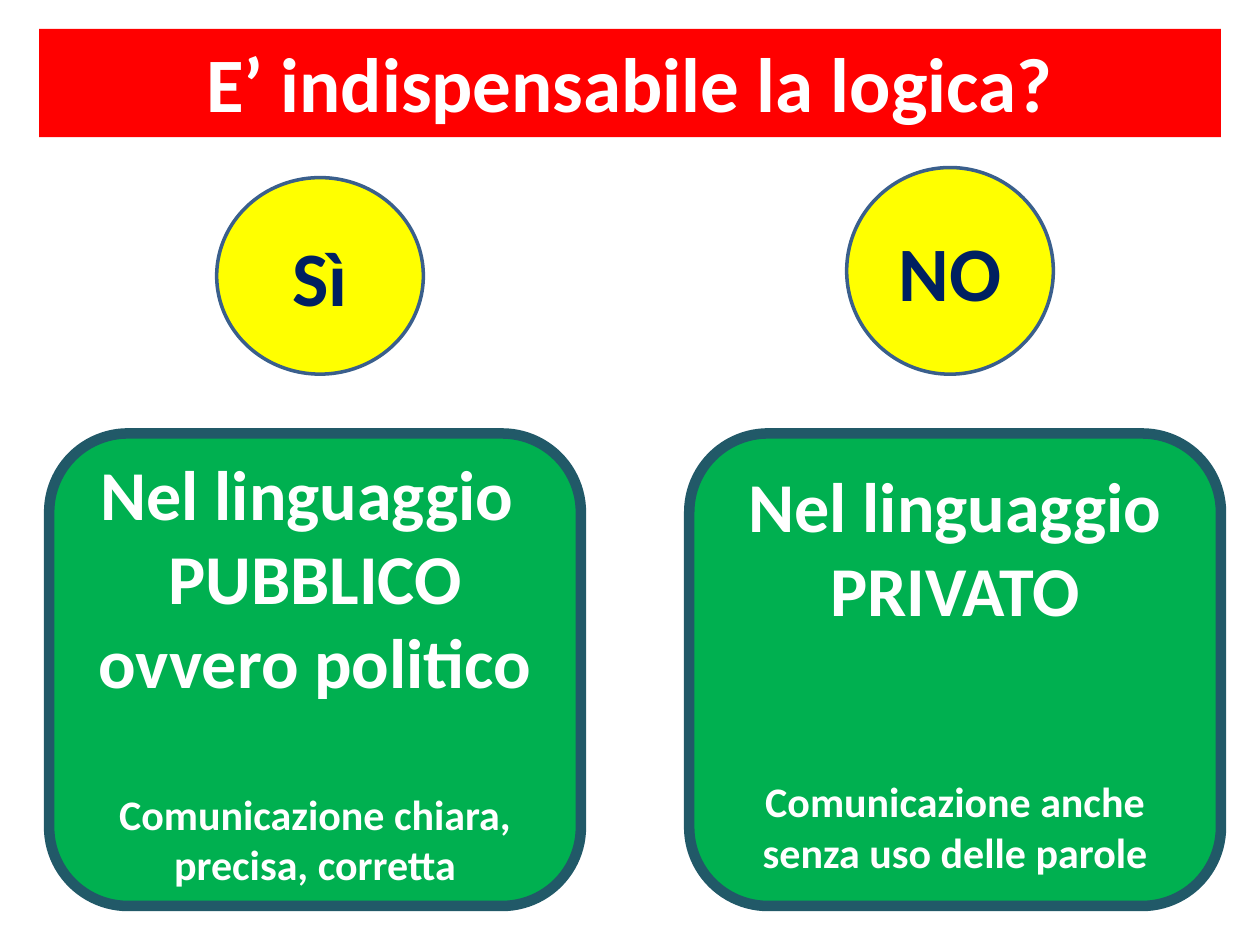
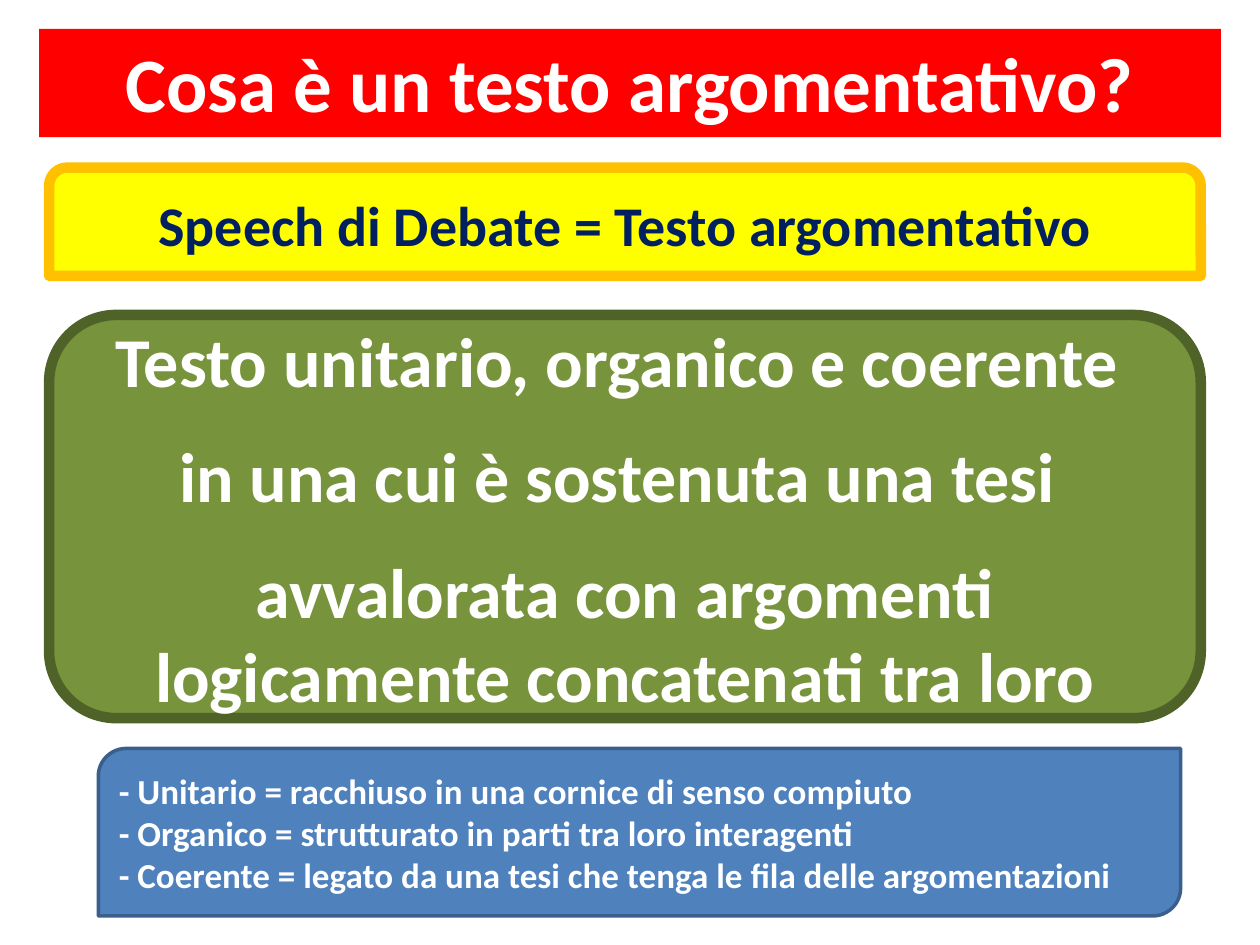
from dataclasses import dataclass

from pptx import Presentation
from pptx.dml.color import RGBColor
from pptx.enum.shapes import MSO_SHAPE as Shape
from pptx.enum.text import MSO_ANCHOR as Anchor, PP_ALIGN as Align
from pptx.util import Pt

PX = 9144  # EMU in one px, 100 px to the inch
SLIDE_W, SLIDE_H = 1000, 750


@dataclass(frozen=True)
class Theme:
    font: str = "Calibri"
    white: str = "FFFFFF"
    navy: str = "002060"
    red: str = "FF0000"
    yellow: str = "FFFF00"
    amber: str = "FFC000"
    green: str = "00B050"
    teal: str = "215968"
    olive: str = "77933C"
    dark_olive: str = "4F6228"
    blue: str = "4F81BD"
    dark_blue: str = "3A5F8C"
    title: int = 44
    statement: int = 40
    subtitle: int = 32
    detail: int = 24
    note: int = 20
    thin: int = 2
    thick: int = 6


THEME = Theme()

LOGIC_TITLE = "E’ indispensabile la logica?"
# gap is the space in points between the statement and the details
ANSWERS = [
    {
        "answer": "Sì", "circle_height": 156, "gap": 49,
        "statement": ["Nel linguaggio ", "PUBBLICO", "ovvero politico"],
        "details": ["Comunicazione chiara,", "precisa, corretta"],
    },
    {
        "answer": "NO", "circle_height": 164, "gap": 83,
        "statement": ["Nel linguaggio", "PRIVATO"],
        "details": ["Comunicazione anche", "senza uso delle parole"],
    },
]

TEXT_TITLE = "Cosa è un testo argomentativo?"
EQUATION = "Speech di Debate = Testo argomentativo"
DEFINITION = [
    "Testo unitario, organico e coerente ",
    "in una cui è sostenuta una tesi ",
    "avvalorata con argomenti logicamente concatenati tra loro",
]
DEFINITION_GAP = 18
GLOSSARY = [
    "- Unitario = racchiuso in una cornice di senso compiuto",
    "- Organico = strutturato in parti tra loro interagenti ",
    "- Coerente = legato da una tesi che tenga le fila delle argomentazioni",
]

MARGIN = 39
TITLE_BOX = (31, 23, 938, 86)
CARD_TOP, CARD_W, CARD_H, CARD_STEP = 344, 422, 375, 508
CIRCLE_LEFT, CIRCLE_W, CIRCLE_BOTTOM, CIRCLE_STEP = 172, 164, 297, 500
PANEL_W = 914


def add_panel(slide, preset, box, fill, outline=None, weight=0):
    panel = slide.shapes.add_shape(preset, *(length * PX for length in box))
    panel.shadow.inherit = False
    panel.fill.solid()
    panel.fill.fore_color.rgb = RGBColor.from_string(fill)
    if outline:
        panel.line.color.rgb = RGBColor.from_string(outline)
        panel.line.width = Pt(weight)
    else:
        panel.line.fill.background()
    return panel


def write(panel, lines, color=THEME.white, align=Align.CENTER, anchor=Anchor.MIDDLE):
    """Fill the panel with lines of (text, size, space before in points)."""
    frame = panel.text_frame
    frame.word_wrap = True
    frame.vertical_anchor = anchor
    frame.text = "\n".join(text for text, _, _ in lines)
    for paragraph, (_, size, space) in zip(frame.paragraphs, lines):
        paragraph.alignment = align
        paragraph.space_before = Pt(space)
        font = paragraph.runs[0].font
        font.name, font.size, font.bold = THEME.font, Pt(size), True
        font.color.rgb = RGBColor.from_string(color)


def add_titled_slide(deck, title):
    slide = deck.slides.add_slide(deck.slide_layouts[6])
    band = add_panel(slide, Shape.RECTANGLE, TITLE_BOX, THEME.red)
    write(band, [(title, THEME.title, 0)], anchor=Anchor.TOP)
    return slide


def add_answer(slide, column, content):
    height = content["circle_height"]
    circle_box = (CIRCLE_LEFT + column * CIRCLE_STEP, CIRCLE_BOTTOM - height,
                  CIRCLE_W, height)
    circle = add_panel(slide, Shape.OVAL, circle_box,
                       THEME.yellow, THEME.dark_blue, THEME.thin)
    write(circle, [(content["answer"], THEME.title, 0)], THEME.navy)

    card_box = (MARGIN + column * CARD_STEP, CARD_TOP, CARD_W, CARD_H)
    card = add_panel(slide, Shape.ROUNDED_RECTANGLE, card_box,
                     THEME.green, THEME.teal, THEME.thick)
    statement = [(text, THEME.statement, 0) for text in content["statement"]]
    details = [(text, THEME.detail, 0 if row else content["gap"])
               for row, text in enumerate(content["details"])]
    write(card, statement + details)


def build_logic_slide(deck):
    slide = add_titled_slide(deck, LOGIC_TITLE)
    for column, content in enumerate(ANSWERS):
        add_answer(slide, column, content)


def build_text_slide(deck):
    slide = add_titled_slide(deck, TEXT_TITLE)

    definition = add_panel(slide, Shape.ROUNDED_RECTANGLE, (MARGIN, 250, PANEL_W, 320),
                           THEME.olive, THEME.dark_olive, THEME.thick)
    write(definition, [(text, THEME.statement, DEFINITION_GAP if row else 0)
                       for row, text in enumerate(DEFINITION)])

    equation = add_panel(slide, Shape.ROUND_2_SAME_RECTANGLE, (MARGIN, 133, PANEL_W, 86),
                         THEME.yellow, THEME.amber, THEME.thick)
    write(equation, [(EQUATION, THEME.subtitle, 0)], THEME.navy)

    glossary = add_panel(slide, Shape.ROUND_2_DIAG_RECTANGLE, (2 * MARGIN, 594, 859, 133),
                         THEME.blue, THEME.dark_blue, THEME.thin)
    write(glossary, [(text, THEME.note, 0) for text in GLOSSARY], align=Align.JUSTIFY)


def main():
    deck = Presentation()
    deck.slide_width, deck.slide_height = SLIDE_W * PX, SLIDE_H * PX
    build_logic_slide(deck)
    build_text_slide(deck)
    deck.save("out.pptx")


if __name__ == "__main__":
    main()
